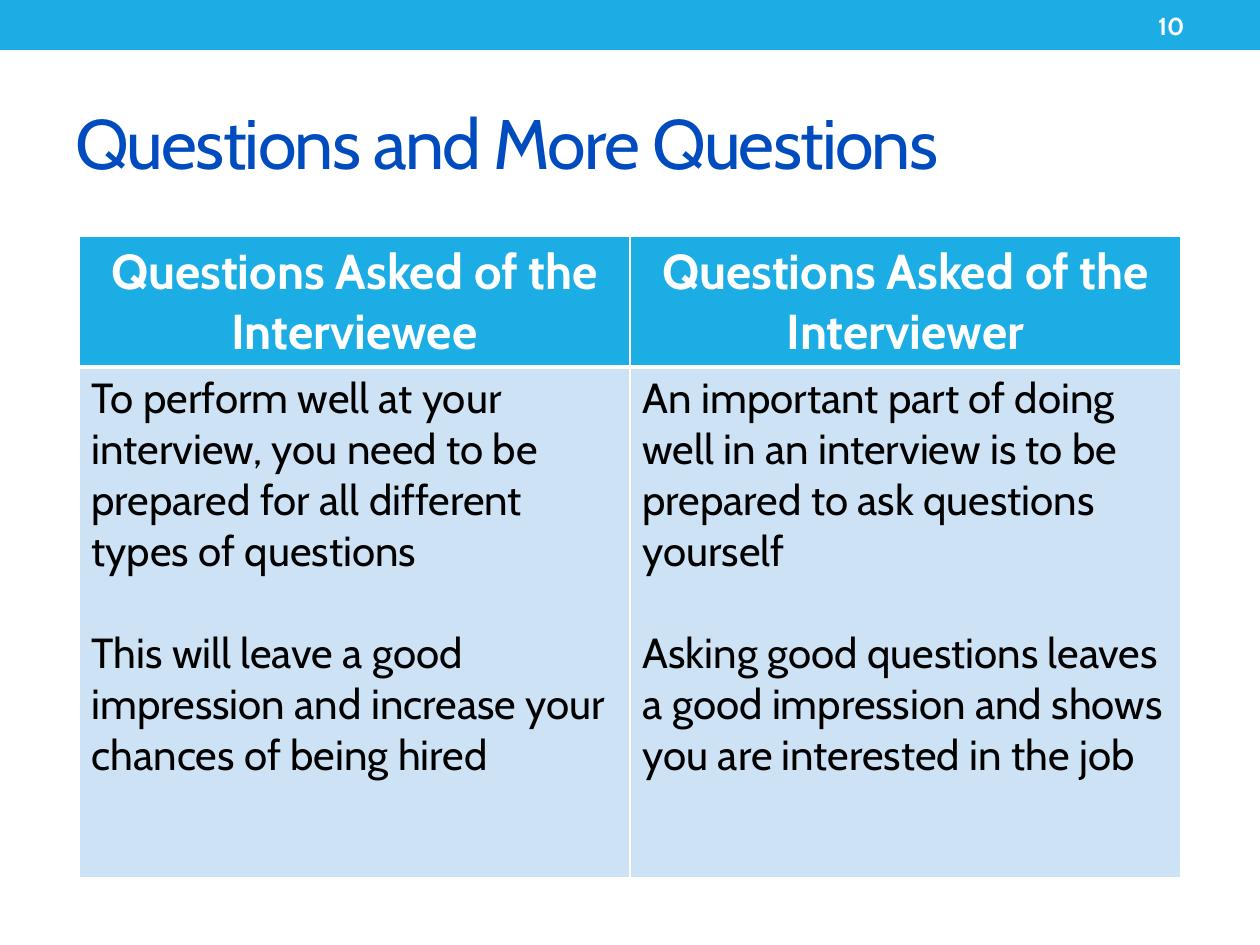
import pptx
import pptx.dml.color
import pptx.enum.shapes
import pptx.enum.text
import pptx.oxml
import pptx.oxml.ns
import pptx.util

RGB = pptx.dml.color.RGBColor
SKY = RGB(0x1C, 0xAD, 0xE4)
BLUE = RGB(0x00, 0x4C, 0xBF)
PALE = RGB(0xCD, 0xE3, 0xF5)
WHITE = RGB(0xFF, 0xFF, 0xFF)
BLACK = RGB(0x00, 0x00, 0x00)
ALIGN = pptx.enum.text.PP_ALIGN
MIDDLE = pptx.enum.text.MSO_ANCHOR.MIDDLE
SCALE = 914400 / 126

HEADS = ["Questions Asked of the Interviewee", "Questions Asked of the Interviewer"]
BODIES = [
    ["To perform well at your interview, you need to be prepared for all different types of questions",
     "This will leave a good impression and increase your chances of being hired"],
    ["An important part of doing well in an interview is to be prepared to ask questions yourself",
     "Asking good questions leaves a good impression and shows you are interested in the job"],
]


def px(*sizes):
    return [pptx.util.Emu(round(size * SCALE)) for size in sizes]


def write(frame, *lines, size, color, bold=False, align=ALIGN.LEFT, gap=0, track=0):
    for i, line in enumerate(lines):
        para = frame.add_paragraph() if i else frame.paragraphs[0]
        para.alignment = align
        para.space_before = pptx.util.Pt(gap if i else 0)
        run = para.add_run()
        run.text = line
        run.font.name = "Cabin"
        run.font.size = pptx.util.Pt(size)
        run.font.bold = bold
        run.font.color.rgb = color
        if track:
            run._r.get_or_add_rPr().set("spc", str(track * 100))


class Deck:
    """Hold the style and the current slide, and draw each kind of element."""

    def __init__(self, width, height):
        self.show = pptx.Presentation()
        self.show.slide_width, self.show.slide_height = px(width, height)
        self.slide = self.show.slides.add_slide(self.show.slide_layouts[6])

    def bar(self, *box, fill):
        kind = pptx.enum.shapes.MSO_SHAPE.RECTANGLE
        shape = self.slide.shapes.add_shape(kind, *px(*box))
        shape.shadow.inherit = False
        shape.fill.solid()
        shape.fill.fore_color.rgb = fill
        shape.line.fill.background()

    def text(self, line, *box, wrap=True, **style):
        frame = self.slide.shapes.add_textbox(*px(*box)).text_frame
        frame.word_wrap = wrap
        frame.vertical_anchor = MIDDLE
        write(frame, line, **style)

    def cell(self, cell, *lines, fill, edges, **style):
        cell.fill.solid()
        cell.fill.fore_color.rgb = fill
        write(cell.text_frame, *lines, **style)
        props = cell._tc.get_or_add_tcPr()
        for i, (side, width) in enumerate(zip("LRTB", edges)):
            props.insert(i, pptx.oxml.parse_xml(
                f'<a:ln{side} {pptx.oxml.ns.nsdecls("a")} w="{pptx.util.Pt(width)}">'
                f'<a:solidFill><a:srgbClr val="{WHITE}"/></a:solidFill></a:ln{side}>'))

    def table(self, left, top, width, rows, heads, bodies):
        box = px(left, top, width, sum(rows))
        grid = self.slide.shapes.add_table(len(rows), len(heads), *box).table
        for row, height in zip(grid.rows, px(*rows)):
            row.height = height
        for i, (head, body) in enumerate(zip(heads, bodies)):
            grid.columns[i].width = px(width / len(heads))[0]
            self.cell(grid.cell(0, i), head, fill=SKY, edges=(1, 1, 1, 3),
                      size=28, color=WHITE, bold=True, align=ALIGN.CENTER)
            self.cell(grid.cell(1, i), *body, fill=PALE, edges=(1, 1, 3, 1),
                      size=24, color=BLACK, gap=29)


def main():
    deck = Deck(1260, 945)
    deck.bar(0, 0, 1260, 50, fill=SKY)
    deck.text("Questions and More Questions", 63, 73, 1134, 136,
              size=40, color=BLUE, track=-1)
    deck.text("10", 1144, 3, 53, 45, wrap=False,
              size=14, color=WHITE, bold=True, align=ALIGN.RIGHT)
    deck.table(79, 236, 1102, [131, 511], HEADS, BODIES)
    deck.show.save("out.pptx")


if __name__ == "__main__":
    main()
